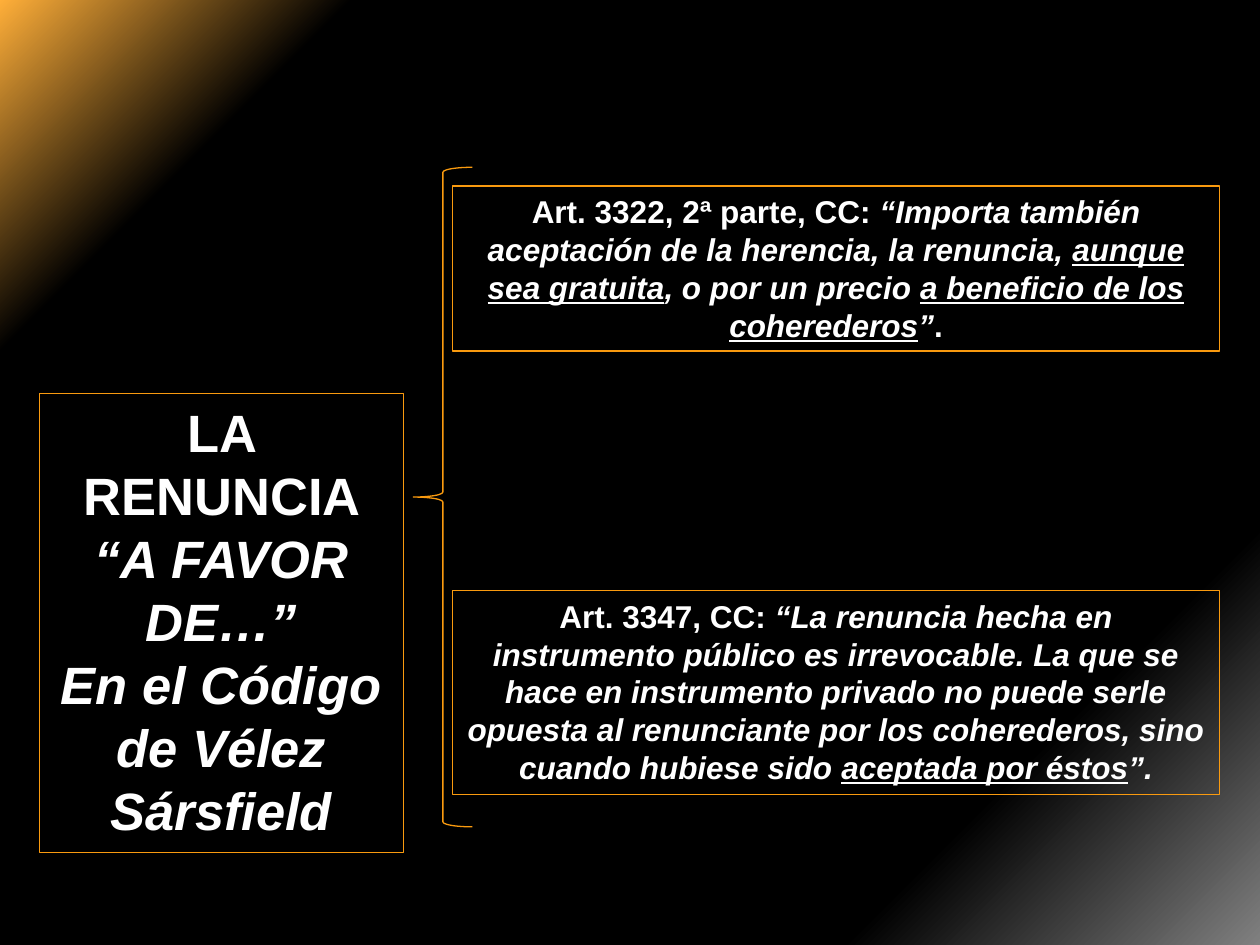
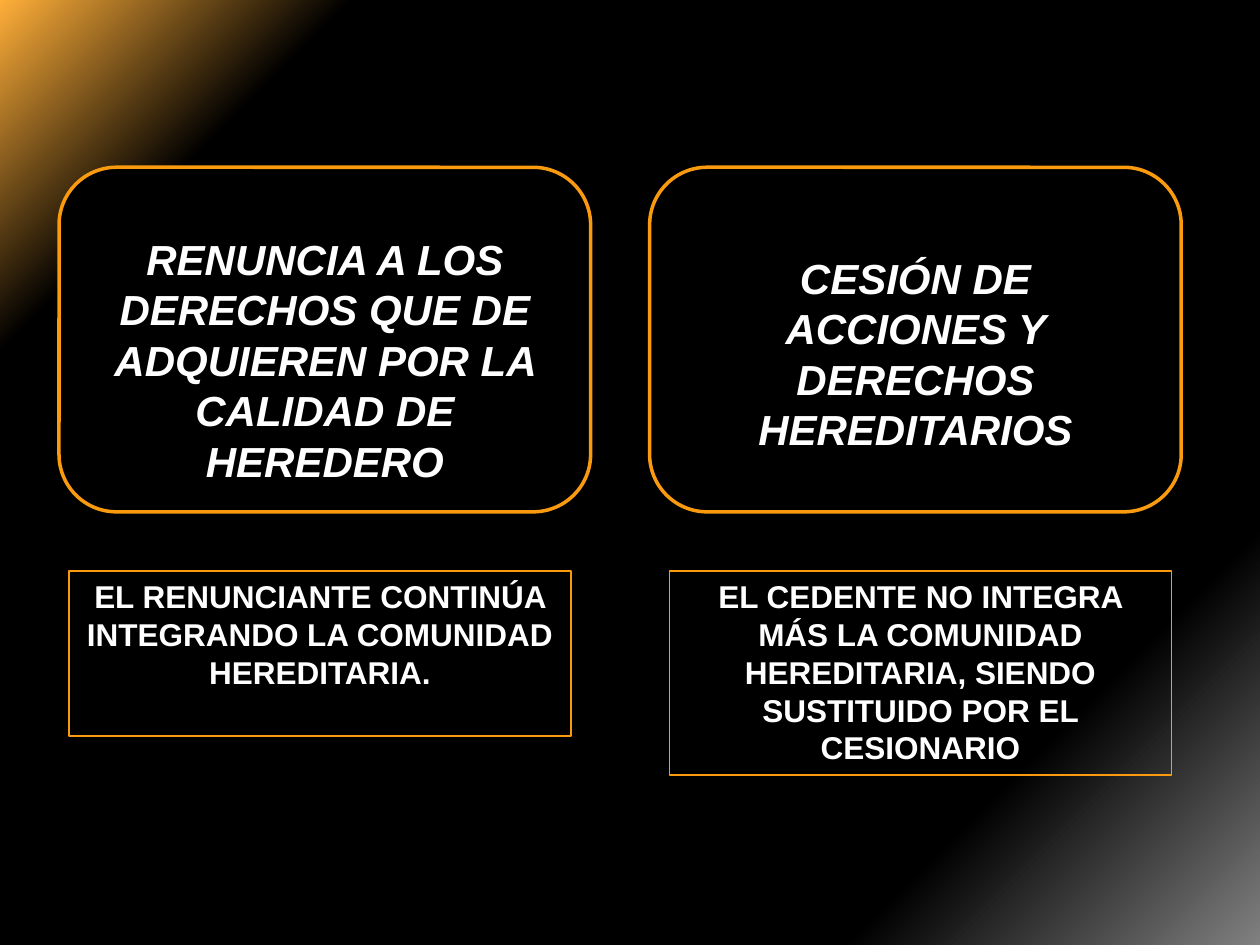
"""Builds two slides on renouncing an inheritance and assigning hereditary rights."""
from lxml.etree import SubElement
from pptx import Presentation
from pptx.dml.color import RGBColor
from pptx.enum.shapes import MSO_SHAPE
from pptx.enum.text import MSO_ANCHOR, PP_ALIGN
from pptx.oxml.ns import qn
from pptx.util import Pt

COLORS = {"orange": "F99A0F", "white": "FFFFFF", "black": "000000",
          "glow": "FFAF39", "gray": "808080"}
FONT = "Arial"
BACKDROP = [(0, "glow", 100), (16, "black", 75), (47, "black", 100), (60, "black", 100),
            (71, "black", 100), (81, "black", 100), (100, "gray", 100)]

TOPIC = [[("LA RENUNCIA ", ""), ("“A FAVOR DE…”", "i")],
         [("En el Código de Vélez Sársfield", "i")]]
ARTICLES = [
    (337.5, 94.3, [[
        ("Art. 3322, 2ª parte, CC: ", ""),
        ("“Importa también aceptación de la herencia, la renuncia, ", "i"),
        ("aunque sea gratuita", "iu"),
        (", o por un precio ", "i"),
        ("a beneficio de los coherederos", "iu"),
        ("”", "i"),
        (".", "")]]),
    (337.5, 116.6, [[
        ("Art. 3347, CC: ", ""),
        ("“La renuncia hecha en instrumento público es irrevocable. La que se hace en "
         "instrumento privado no puede serle opuesta al renunciante por los coherederos, "
         "sino cuando hubiese sido ", "i"),
        ("aceptada por éstos", "iu"),
        ("”.", "i")]]),
]
ARTICLE_TOPS = [106.3, 337.5]

COMPARISON = [
    {"left": 33.75, "act": "RENUNCIA A LOS DERECHOS QUE DE ADQUIEREN POR LA CALIDAD DE HEREDERO",
     "act_top": 129.9, "act_height": 123.8,
     "effect": "EL RENUNCIANTE CONTINÚA INTEGRANDO LA COMUNIDAD HEREDITARIA.",
     "effect_left": 39.4, "effect_height": 94.3},
    {"left": 371.25, "act": "CESIÓN DE ACCIONES Y DERECHOS HEREDITARIOS",
     "act_top": 140.6, "act_height": 94.3,
     "effect": "EL CEDENTE NO INTEGRA MÁS LA COMUNIDAD HEREDITARIA, SIENDO SUSTITUIDO POR EL "
               "CESIONARIO",
     "effect_left": 382.5, "effect_height": 116.6},
]
CARD_TOP, CARD_WIDTH, CARD_HEIGHT = 95.6, 303.75, 196.9
ACT_WIDTH, EFFECT_TOP, EFFECT_WIDTH = 270, 326.25, 286.9


def rgb(name):
    return RGBColor.from_string(COLORS[name])


def paint_backdrop(master):
    fill = master.background.fill
    fill.gradient()
    fill.gradient_angle = 315
    stops = next(master.element.iter(qn("a:gsLst")))
    for stop in list(stops):
        stops.remove(stop)
    for position, color, opacity in BACKDROP:
        stop = SubElement(stops, qn("a:gs"), pos=str(position * 1000))
        shade = SubElement(stop, qn("a:srgbClr"), val=COLORS[color])
        if opacity < 100:
            SubElement(shade, qn("a:alpha"), val=str(opacity * 1000))


def write(holder, paragraphs, size):
    frame = holder.text_frame
    frame.word_wrap = True
    frame.vertical_anchor = MSO_ANCHOR.TOP
    for index, pieces in enumerate(paragraphs):
        paragraph = frame.add_paragraph() if index else frame.paragraphs[0]
        paragraph.alignment = PP_ALIGN.CENTER
        for words, style in pieces:
            run = paragraph.add_run()
            run.text = words
            font = run.font
            font.name, font.size, font.bold = FONT, Pt(size), True
            font.italic, font.underline = "i" in style, "u" in style
            font.color.rgb = rgb("white")


def outline(slide, preset, box, weight=0.75, fill=None):
    shape = slide.shapes.add_shape(preset, *map(Pt, box))
    shape.shadow.inherit = False
    shape.line.color.rgb = rgb("orange")
    shape.line.width = Pt(weight)
    if fill:
        shape.fill.solid()
        shape.fill.fore_color.rgb = rgb(fill)
    else:
        shape.fill.background()
    return shape


def framed_text(slide, box, paragraphs, size=18):
    write(outline(slide, MSO_SHAPE.RECTANGLE, box), paragraphs, size)


def build_articles(slide):
    framed_text(slide, (22.5, 224.8, 208, 262.3), TOPIC, 30)
    for top, (_, height, paragraphs) in zip(ARTICLE_TOPS, ARTICLES):
        framed_text(slide, (258.5, top, 438.5, height), paragraphs)
    outline(slide, MSO_SHAPE.LEFT_BRACE, (236.2, 95.6, 33.8, 376.9))


def build_comparison(slide):
    for side in COMPARISON:
        outline(slide, MSO_SHAPE.FLOWCHART_ALTERNATE_PROCESS,
                (side["left"], CARD_TOP, CARD_WIDTH, CARD_HEIGHT), 2, "black")
        act_left = side["left"] + (CARD_WIDTH - ACT_WIDTH) / 2
        act = slide.shapes.add_textbox(
            *map(Pt, (act_left, side["act_top"], ACT_WIDTH, side["act_height"])))
        write(act, [[(side["act"], "i")]], 24)
        framed_text(slide, (side["effect_left"], EFFECT_TOP, EFFECT_WIDTH,
                            side["effect_height"]), [[(side["effect"], "")]])


def main():
    deck = Presentation()
    deck.slide_width, deck.slide_height = Pt(720), Pt(540)
    paint_backdrop(deck.slide_master)
    for build in (build_articles, build_comparison):
        build(deck.slides.add_slide(deck.slide_layouts[6]))
    deck.save("out.pptx")


if __name__ == "__main__":
    main()
